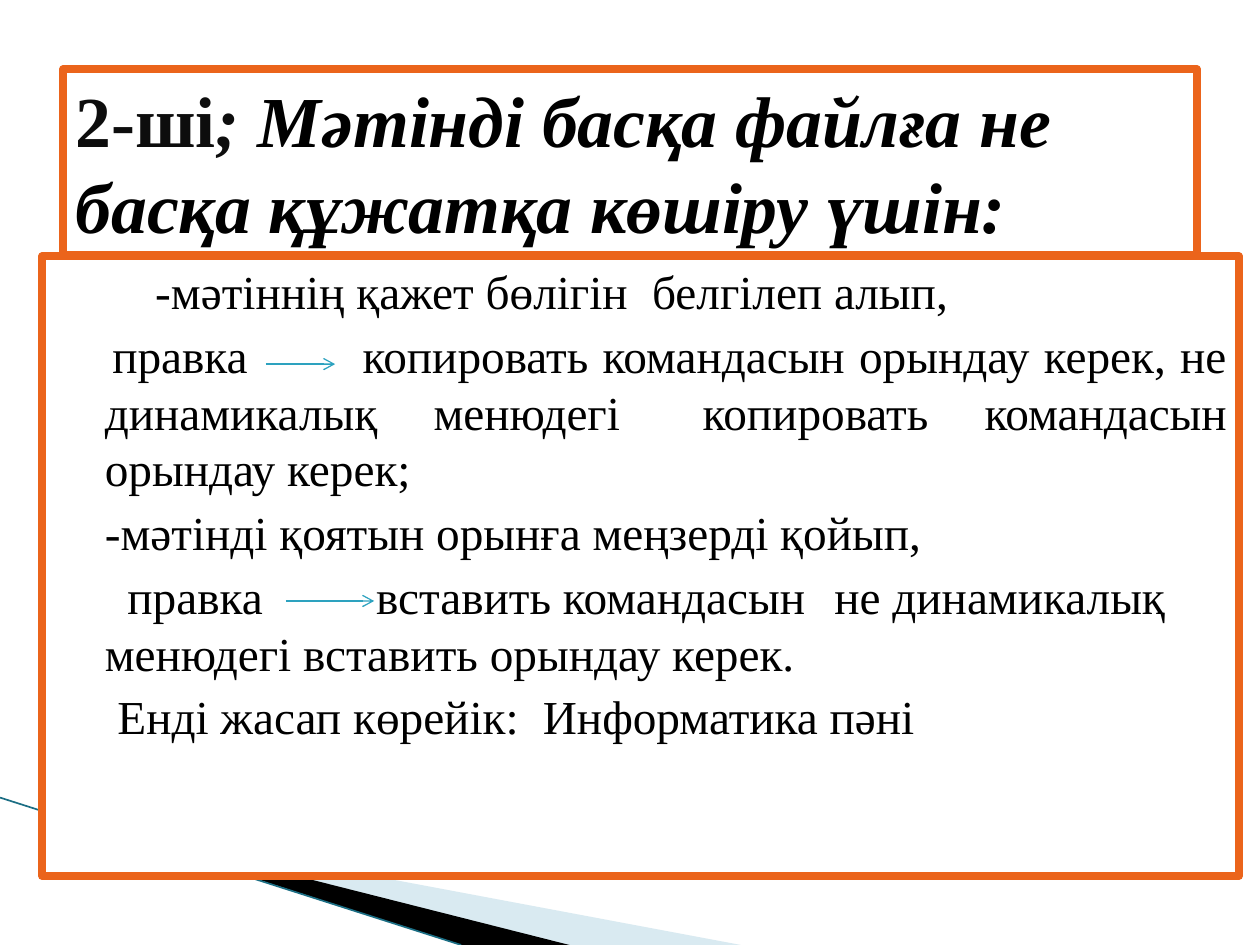
from lxml.etree import SubElement as Sub
from pptx import Presentation
from pptx.dml.color import RGBColor as RGB
from pptx.enum.shapes import MSO_CONNECTOR as Conn, MSO_SHAPE as Kind
from pptx.enum.text import MSO_ANCHOR as Anchor, PP_ALIGN as Align
from pptx.oxml.ns import qn
from pptx.util import Inches, Pt

WHITE = RGB(0xFF, 0xFF, 0xFF)
BLACK = RGB(0, 0, 0)
INK = RGB(0x0D, 0x0D, 0x0D)
ORANGE = RGB(0xEB, 0x64, 0x1B)
TEAL = RGB(0x2D, 0xA2, 0xBF)
DEEP = RGB(0x1B, 0x6E, 0x84)
PALE = RGB(0xA0, 0xCB, 0xDC)

COLS, ROWS = 100, 75
FONT = "Times New Roman"


class Deck:
    """Holds the style and the current slide; lengths are grid columns and rows."""

    def __init__(self, wide, high):
        self.prs = Presentation()
        self.prs.slide_width, self.prs.slide_height = Inches(wide), Inches(high)
        self.slide = self.prs.slides.add_slide(self.prs.slide_layouts[6])
        self.shapes = self.slide.shapes

    def x(self, col):
        return round(self.prs.slide_width * col / COLS)

    def y(self, row):
        return round(self.prs.slide_height * row / ROWS)

    def wedge(self, points, color, alpha=None):
        spots = [(self.x(c), self.y(r)) for c, r in points]
        pen = self.shapes.build_freeform(*spots[0])
        pen.add_line_segments(spots[1:], close=True)
        shape = pen.convert_to_shape()
        shape.shadow.inherit = False
        shape.fill.solid()
        shape.fill.fore_color.rgb = color
        shape.line.fill.background()
        if alpha:
            tint = shape._element.spPr.find(".//" + qn("a:srgbClr"))
            Sub(tint, qn("a:alpha"), val=str(alpha * 1000))

    def line(self, start, end, color, width, arrow=False):
        (c1, r1), (c2, r2) = start, end
        line = self.shapes.add_connector(
            Conn.STRAIGHT, self.x(c1), self.y(r1), self.x(c2), self.y(r2))
        line.line.color.rgb = color
        line.line.width = Pt(width)
        if arrow:
            Sub(line._element.spPr.find(qn("a:ln")), qn("a:tailEnd"), type="arrow")
        Sub(line._element.spPr, qn("a:effectLst"))

    def frame(self, col, row, wide, high, anchor):
        box = self.shapes.add_shape(
            Kind.RECTANGLE, self.x(col), self.y(row), self.x(wide), self.y(high))
        box.shadow.inherit = False
        box.fill.solid()
        box.fill.fore_color.rgb = WHITE
        box.line.color.rgb = ORANGE
        box.line.width = Pt(4.33)
        text = box.text_frame
        text.word_wrap = True
        text.vertical_anchor = anchor
        return text

    def para(self, text, runs, align=Align.LEFT, left=0, first=0, gap=0):
        fresh = not text.paragraphs[0].runs
        para = text.paragraphs[0] if fresh else text.add_paragraph()
        props = para._p.get_or_add_pPr()
        props.set("marL", str(self.x(left)))
        props.set("indent", str(self.x(first)))
        para.alignment = align
        para.space_before = Pt(0 if fresh else gap)
        for words, color, style in runs:
            run = para.add_run()
            run.font.color.rgb = color
            for key, value in {"name": FONT, **style}.items():
                setattr(run.font, key, value)
            # A number stands for one space widened by that many points
            if isinstance(words, str):
                run.text = words
            else:
                run.text = " "
                run._r.get_or_add_rPr().set("spc", str(round(words * 100)))


def main():
    deck = Deck(10, 7.5)

    # Corner ribbons
    deck.wedge([(5.5, 65), (58.8, 75), (44.8, 75)], PALE, alpha=40)
    deck.wedge([(5.3, 64.9), (45.2, 75), (36.6, 75)], BLACK)
    deck.line((0, 63.3), (36.6, 75), DEEP, 0.95)

    # Steps
    steps = deck.frame(3.34, 20.33, 95, 49.2, Anchor.TOP)
    body = {"size": Pt(27)}
    for parts, align, first in (
        (("-мәтіннің қажет бөлігін", 7, "белгілеп алып,"), Align.LEFT, 4),
        (("правка", 57.5, "копировать командасын орындау керек, не "
          "динамикалық менюдегі", 15, "копировать командасын орындау керек;"),
         Align.JUSTIFY, 0.6),
        (("-мәтінді қоятын орынға меңзерді қойып,",), Align.JUSTIFY, 0),
        (("правка", 58, "вставить командасын", 10, "не динамикалық "
          "менюдегі вставить орындау керек."), Align.LEFT, 1.8),
        (("Енді жасап көрейік:", 7, "Информатика пәні"), Align.JUSTIFY, 1),
    ):
        runs = [(part, BLACK, body) for part in parts]
        deck.para(steps, runs, align, 4, first, gap=4)

    # Title
    title = deck.frame(5, 5.5, 90, 14.7, Anchor.MIDDLE)
    bold = {"size": Pt(41), "bold": True}
    slant = {**bold, "italic": True}
    deck.para(title, [
        ("2-ші", INK, bold),
        ("; ", INK, slant),
        ("Мәтінді басқа файлға не басқа құжатқа көшіру үшін:", BLACK, slant),
    ])

    # Menu arrows
    for left, right, row in ((21.1, 26.6, 28.9), (22.7, 29.7, 47.7)):
        deck.line((left, row), (right, row), TEAL, 0.75, arrow=True)

    deck.prs.save("out.pptx")


if __name__ == "__main__":
    main()
